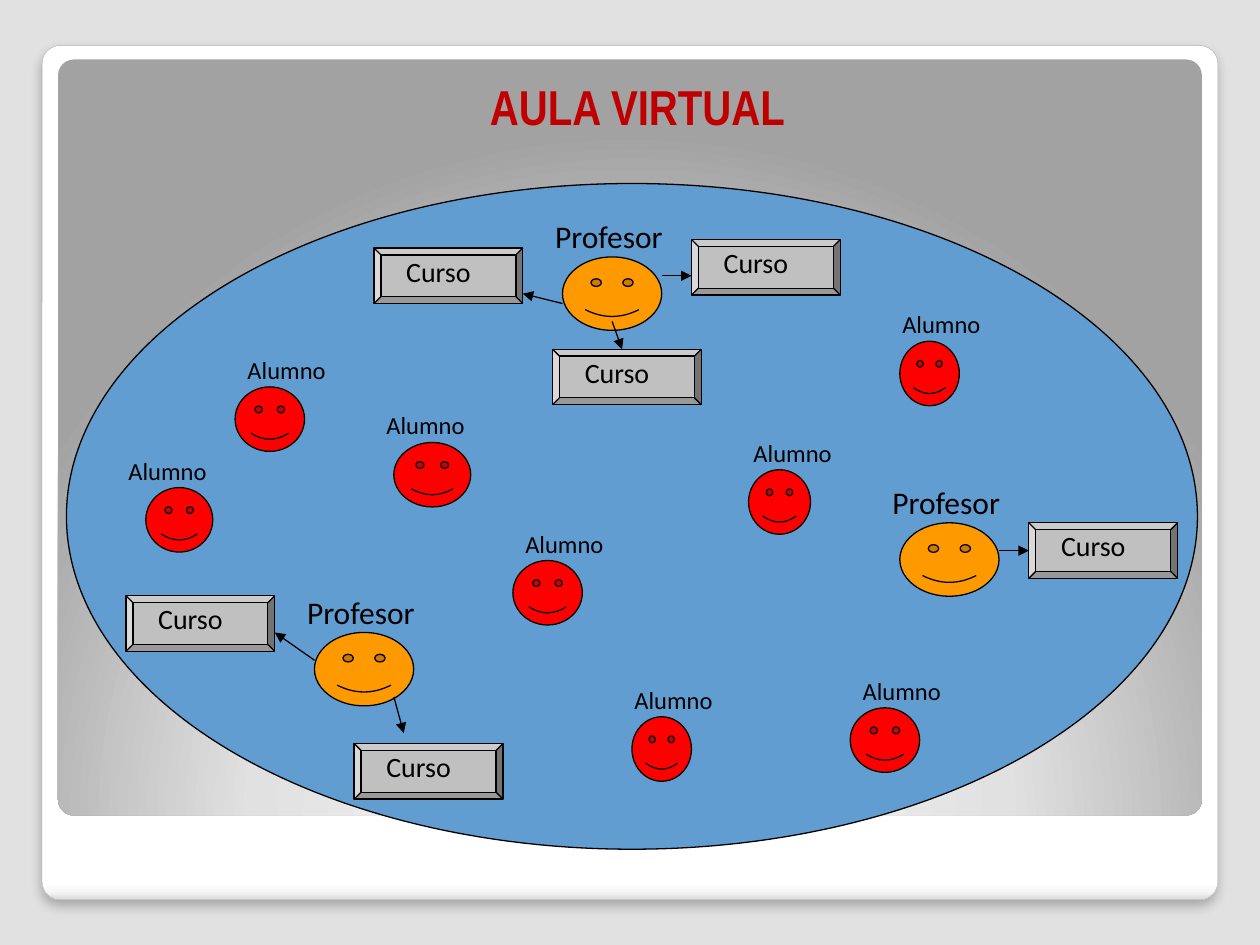
from lxml import etree
from pptx import Presentation
from pptx.dml.color import RGBColor
from pptx.enum import shapes, text
from pptx.oxml import parse_xml
from pptx.oxml.ns import nsdecls, qn
from pptx.util import Cm, Pt

BLACK = "000000"
FACE = shapes.MSO_SHAPE.SMILEY_FACE

# Positions in cm. Students: face x, y, width and label shift, from the classroom's corner.
STUDENTS = [
    (1.6, 6.13, 1.35, -0.6), (3.4, 4.1, 1.4, 0), (6.6, 5.22, 1.55, -0.4),
    (9, 7.6, 1.4, 0), (11.4, 10.75, 1.2, -0.2), (13.75, 5.77, 1.25, -0.15),
    (15.8, 10.57, 1.4, 0), (16.8, 3.18, 1.2, -0.2),
]
# Teachers: face x, y; courses and arrows are measured from the face's corner.
TEACHERS = [
    (10, 1.48, [(-3.8, -0.18), (2.6, -0.35), (-0.2, 1.86)],
     [(0, 0.94, -0.8, 0.74), (1, 1.3, 1.2, 1.86), (2, 0.38, 2.6, 0.38)]),
    (5, 9.05, [(0.8, 2.24), (-3.8, -0.74)],
     [(0, 0.56, -0.8, 0), (1.6, 1.3, 1.8, 2.03)]),
    (16.8, 6.84, [(2.6, 0)], [(2, 0.56, 2.6, 0.56)]),
]


def rgb(value):
    return RGBColor.from_string(value)


def cm(*values):
    return [Cm(v) for v in values]


def write(tf, words, size, font="Calibri", color=BLACK, bold=False,
          align=text.PP_ALIGN.LEFT, spacing=None):
    p = tf.paragraphs[0]
    p.alignment = align
    p.line_spacing = spacing
    r = p.add_run()
    r.text = words
    r.font.size = Pt(size)
    r.font.name = font
    r.font.bold = bold
    r.font.color.rgb = rgb(color)


def add_label(group, words, box, size):
    tf = group.add_textbox(*cm(*box)).text_frame
    tf.word_wrap = True
    tf.auto_size = text.MSO_AUTO_SIZE.SHAPE_TO_FIT_TEXT
    write(tf, words, size)


def add_outlined(group, kind, box, color):
    sp = group.add_shape(kind, *cm(*box))
    sp.shadow.inherit = False
    sp.fill.solid()
    sp.fill.fore_color.rgb = rgb(color)
    sp.line.color.rgb = rgb(BLACK)
    sp.line.width = Pt(0.75)


def add_arrow(group, x1, y1, x2, y2):
    line = group.add_connector(shapes.MSO_CONNECTOR.STRAIGHT, *cm(x1, y1, x2, y2))
    line.line.color.rgb = rgb(BLACK)
    line.line.width = Pt(0.75)
    sp_pr = line._element.spPr
    etree.SubElement(sp_pr.find(qn("a:ln")), qn("a:tailEnd"), type="triangle")
    etree.SubElement(sp_pr, qn("a:effectLst"))


def add_panel(slide, box, stops, direction):
    """Rounded panel with a gradient of (percent, colour) stops."""
    sp = slide.shapes.add_shape(shapes.MSO_SHAPE.ROUNDED_RECTANGLE, *cm(*box))
    sp.adjustments[0] = 0.021
    sp.shadow.inherit = False
    sp.line.fill.background()
    sp.fill.background()
    marks = "".join(f'<a:gs pos="{pos * 1000}"><a:srgbClr val="{color}"/></a:gs>'
                    for pos, color in stops)
    sp_pr = sp._element.spPr
    sp_pr.replace(sp_pr.find(qn("a:noFill")), parse_xml(
        f'<a:gradFill {nsdecls("a")} rotWithShape="1"><a:gsLst>{marks}</a:gsLst>'
        f'{direction}</a:gradFill>'))
    return sp


def add_frame(slide, x, y, w, h):
    card = add_panel(slide, (x, y, w, h),
                     [(0, "FFFFFF"), (98, "FFFFFF"), (99, "F7F7F7"), (100, "DADADA")],
                     '<a:lin ang="5400000" scaled="0"/>')
    card.line.color.rgb = rgb("A4A4A4")
    card.line.width = Pt(0.16)
    card._element.spPr.find(qn("a:effectLst")).append(parse_xml(
        f'<a:outerShdw {nsdecls("a")} blurRad="{Pt(6)}" dist="{Pt(4)}" dir="5400000" '
        'rotWithShape="0"><a:srgbClr val="000000"><a:alpha val="25000"/></a:srgbClr>'
        '</a:outerShdw>'))
    add_panel(slide, (x + 0.32, y + 0.28, w - 0.64, 15.24),
              [(0, "FFFFFF"), (55, "E1E1E1"), (100, "A2A2A2")],
              '<a:path path="circle"><a:fillToRect l="50000" t="175000" '
              'r="50000" b="-75000"/></a:path>')


def add_title(slide, x, y, w, h):
    title = slide.shapes.title
    title.left, title.top, title.width, title.height = cm(x, y, w, h)
    slide.shapes._spTree.append(title._element)  # in front of the frame
    tf = title.text_frame
    tf.vertical_anchor = text.MSO_ANCHOR.BOTTOM
    write(tf, "AULA VIRTUAL", 28, font="Arial Narrow", color="C00000", bold=True,
          align=text.PP_ALIGN.CENTER, spacing=0.9)


def add_course(group, x, y):
    add_outlined(group, shapes.MSO_SHAPE.BEVEL, (x, y, 3, 1.12), "C0C0C0")
    add_label(group, "Curso", (x + 0.4, y, 2.4, 0.87), 16)


def add_teacher(group, x, y, courses, arrows):
    add_outlined(group, FACE, (x, y, 2, 1.48), "FF9900")
    add_label(group, "Profesor", (x - 0.4, y - 0.92, 3, 0.93), 18)
    for dx, dy in courses:
        add_course(group, x + dx, y + dy)
    for x1, y1, x2, y2 in arrows:
        add_arrow(group, x + x1, y + y1, x + x2, y + y2)


def add_student(group, x, y, w, shift):
    add_outlined(group, FACE, (x, y, w, 1.3), "FF0000")
    add_label(group, "Alumno", (x + shift, y - 0.77, 2.4, 0.78), 14)


def add_classroom(slide, x, y, w, h):
    group = slide.shapes.add_group_shape().shapes
    add_outlined(group, shapes.MSO_SHAPE.OVAL, (x, y, w, h), "629DD1")
    for dx, dy, courses, arrows in TEACHERS:
        add_teacher(group, x + dx, y + dy, courses, arrows)
    for dx, dy, width, shift in STUDENTS:
        add_student(group, x + dx, y + dy, width, shift)


def main():
    prs = Presentation()
    prs.slide_width, prs.slide_height = cm(25.4, 19.05)
    slide = prs.slides.add_slide(prs.slide_layouts[5])
    slide.background.fill.solid()
    slide.background.fill.fore_color.rgb = rgb("E1E1E1")
    add_frame(slide, 0.85, 0.92, 23.7, 17.22)
    add_title(slide, 1.42, 0.92, 22.86, 1.96)
    add_classroom(slide, 1.34, 3.7, 22.8, 13.42)
    prs.save("out.pptx")


if __name__ == "__main__":
    main()
